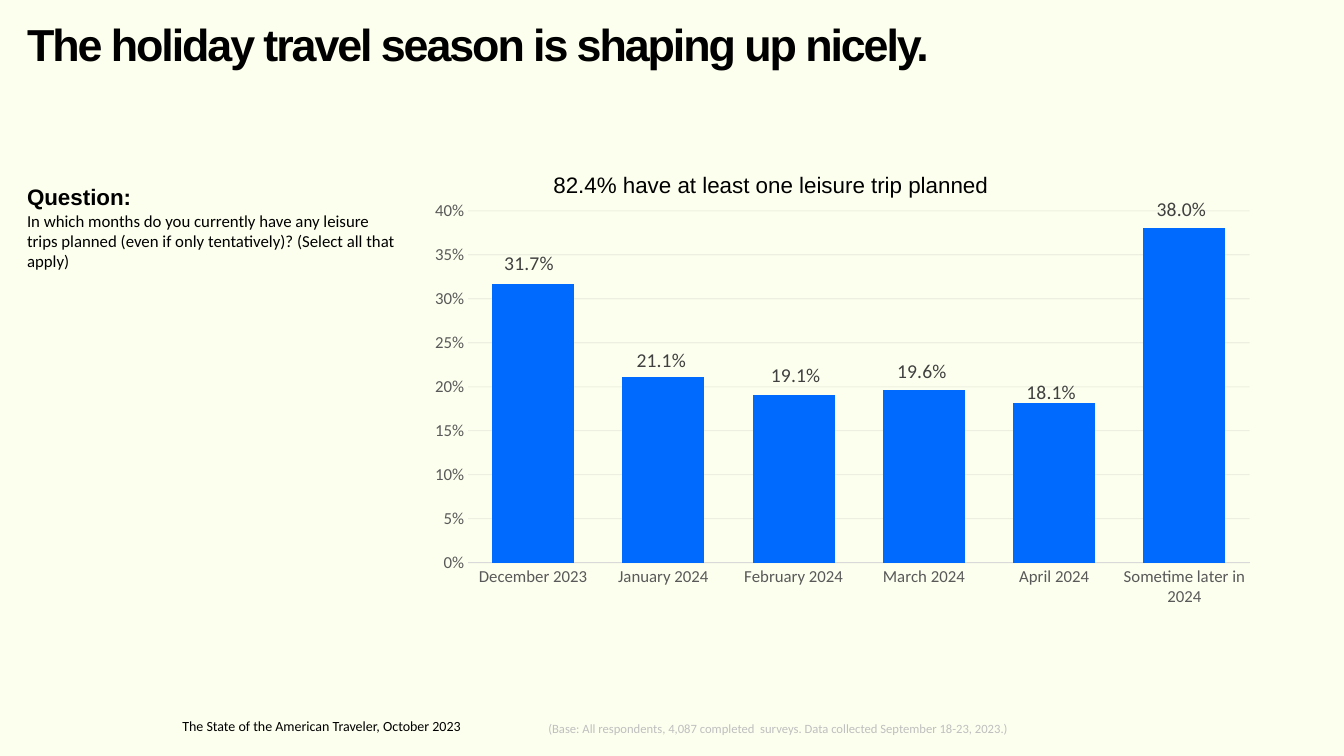
from dataclasses import dataclass, field

import pptx
import pptx.chart.data
import pptx.dml.color
import pptx.enum.chart
import pptx.enum.text
import pptx.oxml
import pptx.oxml.ns
import pptx.util
from lxml import etree

Inches = pptx.util.Inches
Pt = pptx.util.Pt
RGBColor = pptx.dml.color.RGBColor

CREAM = RGBColor(0xFC, 0xFF, 0xEE)
BLACK = RGBColor(0x00, 0x00, 0x00)
BLUE = RGBColor(0x00, 0x6A, 0xFF)
LABEL_GRAY = RGBColor(0x40, 0x40, 0x40)
AXIS_GRAY = RGBColor(0x59, 0x59, 0x59)
BASE_GRAY = RGBColor(0xBF, 0xBF, 0xBF)
LINE_GRAY = RGBColor(0xD9, 0xD9, 0xD9)

CHART_WIDTH, CHART_HEIGHT = 8.76, 5.34


@dataclass
class Line:
    text: str
    size: float
    font: str = "Calibri"
    color: RGBColor = BLACK
    bold: bool = False
    spacing: float = 0


@dataclass
class Note:
    left: float
    top: float
    width: float
    height: float
    lines: list[Line] = field(default_factory=list)
    wrap: bool = True


@dataclass
class Month:
    name: str
    share: float
    # Label offset from the inside end of the bar, in inches
    shift: float
    lift: float


FOOTER = Note(1.71, 7.07, 3.53, 0.27, [
    Line("The State of the American Traveler, October 2023", 10)])

NOTES = [
    Note(0.17, 0.12, 11.22, 0.64, [
        Line("The holiday travel season is shaping up nicely.", 32, "Arial",
             bold=True, spacing=-1.5)]),
    Note(0.17, 1.77, 3.93, 1.21, [
        Line("Question:", 16, "Arial", bold=True),
        Line("In which months do you currently have any leisure trips planned "
             "(even if only tentatively)? (Select all that apply)", 12)]),
    Note(5.34, 7.1, 5.34, 0.4, [
        Line("(Base: All respondents, 4,087 completed  surveys. "
             "Data collected September 18-23, 2023.)", 9, color=BASE_GRAY)], wrap=False),
    Note(5.39, 1.65, 5.73, 0.37, [
        Line("82.4% have at least one leisure trip planned", 16, "Arial")], wrap=False),
]

MONTHS = [
    Month("December 2023", 0.317, -0.04, -0.36),
    Month("January 2024", 0.211, -0.02, -0.32),
    Month("February 2024", 0.191, 0.02, -0.35),
    Month("March 2024", 0.196, -0.02, -0.34),
    Month("April 2024", 0.181, -0.03, -0.27),
    Month("Sometime later in 2024", 0.38, -0.03, -0.34),
]


def set_font(font, size: float, color: RGBColor, name: str = "Calibri",
             bold: bool = False) -> None:
    for attribute, value in {"size": Pt(size), "name": name, "bold": bold}.items():
        setattr(font, attribute, value)
    font.color.rgb = color


def add_note(slide, note: Note) -> None:
    box = slide.shapes.add_textbox(
        *map(Inches, (note.left, note.top, note.width, note.height)))
    frame = box.text_frame
    frame.word_wrap = note.wrap
    frame.auto_size = pptx.enum.text.MSO_AUTO_SIZE.SHAPE_TO_FIT_TEXT
    for index, line in enumerate(note.lines):
        paragraph = frame.add_paragraph() if index else frame.paragraphs[0]
        run = paragraph.add_run()
        run.text = line.text
        set_font(run.font, line.size, line.color, line.font, line.bold)
        if line.spacing:
            run._r.get_or_add_rPr().set("spc", str(round(line.spacing * 100)))


def manual_layout(**values: object):
    """Build a chart layout element from its child values."""
    qn = pptx.oxml.ns.qn
    layout = pptx.oxml.parse_xml(
        f'<c:layout {pptx.oxml.ns.nsdecls("c")}><c:manualLayout/></c:layout>')
    for name, value in values.items():
        etree.SubElement(layout[0], qn(f"c:{name}")).set("val", str(value))
    return layout


def label_bars(series) -> None:
    qn = pptx.oxml.ns.qn
    inside_end = pptx.enum.chart.XL_LABEL_POSITION.INSIDE_END
    labels = series.data_labels
    settings = {"show_value": True, "number_format": "0.0%",
                "number_format_is_linked": False, "position": inside_end}
    for attribute, value in settings.items():
        setattr(labels, attribute, value)
    set_font(labels.font, 14, LABEL_GRAY)
    for index, month in enumerate(MONTHS):
        label = series.points[index].data_label
        set_font(label.font, 14, LABEL_GRAY)
        label.position = inside_end
    for month, element in zip(MONTHS, labels._element.findall(qn("c:dLbl"))):
        element.insert(1, manual_layout(x=round(month.shift / CHART_WIDTH, 4),
                                        y=round(month.lift / CHART_HEIGHT, 4)))
        number_format = pptx.oxml.parse_xml(
            f'<c:numFmt {pptx.oxml.ns.nsdecls("c")} formatCode="0.0%" sourceLinked="0"/>')
        element.insert(2, number_format)


def add_month_chart(slide) -> None:
    chart_enum = pptx.enum.chart
    data = pptx.chart.data.CategoryChartData(number_format="0.0%")
    data.categories = [month.name for month in MONTHS]
    data.add_series("Series 1", [month.share for month in MONTHS])
    chart = slide.shapes.add_chart(
        chart_enum.XL_CHART_TYPE.COLUMN_STACKED, Inches(3.88), Inches(1.52),
        Inches(CHART_WIDTH), Inches(CHART_HEIGHT), data).chart
    chart.has_legend = chart.has_title = False
    set_font(chart.font, 12, BLACK)

    # Bars
    bars = chart.plots[0]
    for attribute, value in {"gap_width": 59, "overlap": 100,
                             "vary_by_categories": False}.items():
        setattr(bars, attribute, value)
    shares = bars.series[0]
    shares.format.fill.solid()
    shares.format.fill.fore_color.rgb = BLUE
    label_bars(shares)

    # Axes
    for axis in (chart.category_axis, chart.value_axis):
        axis.major_tick_mark = axis.minor_tick_mark = chart_enum.XL_TICK_MARK.NONE
        set_font(axis.tick_labels.font, 12, AXIS_GRAY)
    month_line = chart.category_axis.format.line
    month_line.width = Pt(0.75)
    month_line.color.rgb = LINE_GRAY
    share_axis = chart.value_axis
    for attribute, value in {"minimum_scale": 0, "maximum_scale": 0.4, "major_unit": 0.05,
                             "has_major_gridlines": True}.items():
        setattr(share_axis, attribute, value)
    share_axis.format.line.fill.background()
    share_axis.tick_labels.number_format = "0%"
    share_axis.tick_labels.number_format_is_linked = False

    # Faint gridlines: black at 5% opacity
    qn = pptx.oxml.ns.qn
    grid = share_axis.major_gridlines.format.line
    grid.width = Pt(0.75)
    grid.color.rgb = BLACK
    grid_color = share_axis._element.find(qn("c:majorGridlines")).find(f".//{qn('a:srgbClr')}")
    etree.SubElement(grid_color, qn("a:alpha")).set("val", "5000")

    # Plot area inside the chart frame
    plot_area = chart._chartSpace.chart.plotArea
    for old_layout in plot_area.findall(qn("c:layout")):
        plot_area.remove(old_layout)
    plot_area.insert(0, manual_layout(
        layoutTarget="inner", xMode="edge", yMode="edge",
        x=round(0.76 / CHART_WIDTH, 3), y=round(0.57 / CHART_HEIGHT, 3),
        w=round(7.75 / CHART_WIDTH, 3), h=round(3.49 / CHART_HEIGHT, 3)))


def main() -> None:
    deck = pptx.Presentation()
    deck.slide_width, deck.slide_height = Inches(13.33), Inches(7.5)
    slide = deck.slides.add_slide(deck.slide_layouts[6])
    slide.background.fill.solid()
    slide.background.fill.fore_color.rgb = CREAM
    add_note(slide, FOOTER)
    add_month_chart(slide)
    for note in NOTES:
        add_note(slide, note)
    deck.save("out.pptx")


if __name__ == "__main__":
    main()
